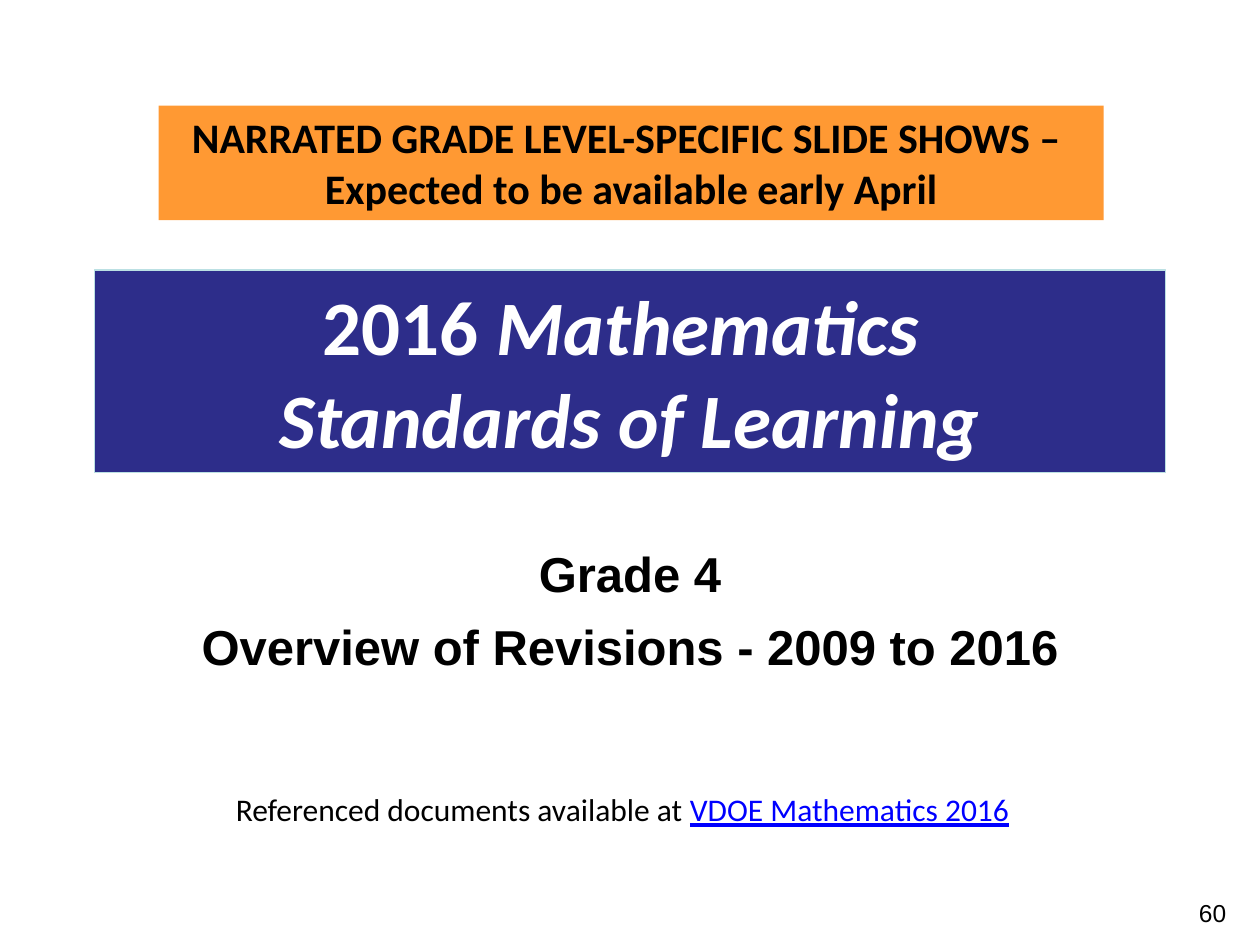
"""Build the cover slide of the Grade 4 standards overview."""
from pptx import Presentation
from pptx.dml.color import RGBColor
from pptx.enum.shapes import MSO_SHAPE as Kind
from pptx.enum.text import MSO_ANCHOR as Anchor, MSO_AUTO_SIZE as Fit, PP_ALIGN as Align
from pptx.util import Cm, Pt

NAVY = RGBColor(0x2D, 0x2D, 0x8A)
PALE = RGBColor(0xBB, 0xE0, 0xE3)
GOLD = RGBColor(0xFF, 0x99, 0x33)
BLUE = RGBColor(0x00, 0x00, 0xFF)
BLACK = RGBColor(0x00, 0x00, 0x00)
WHITE = RGBColor(0xFF, 0xFF, 0xFF)


class Deck:
    def __init__(self):
        self.prs = Presentation()
        self.prs.slide_width, self.prs.slide_height = Cm(25.4), Cm(19.05)
        self.slide = self.prs.slides.add_slide(self.prs.slide_layouts[5])
        self.base = dict(name="Calibri", size=Pt(18), bold=False, italic=False)

    def fill_text(self, shape, lines, align=Align.CENTER, gap=0, color=BLACK, **style):
        frame = shape.text_frame
        frame.word_wrap, frame.auto_size = True, Fit.NONE
        for i, line in enumerate(lines):
            para = frame.add_paragraph() if i else frame.paragraphs[0]
            para.alignment = align
            if i:
                para.space_before = Pt(gap)
            for text, extra in line:
                if text == "\n":
                    para.add_line_break()
                    continue
                run = para.add_run()
                run.text = text
                look = {**self.base, **style, **extra}
                run.font.color.rgb = look.pop("color", color)
                for key, value in look.items():
                    setattr(run.font, key, value)
        return frame

    def title(self, box, lines, **style):
        shape = self.slide.shapes.title
        shape.left, shape.top, shape.width, shape.height = map(Cm, box)
        shape.fill.solid()
        shape.fill.fore_color.rgb = NAVY
        shape.line.color.rgb = PALE
        shape.line.width = Pt(0.75)
        self.fill_text(shape, lines, **style).vertical_anchor = Anchor.MIDDLE

    def text(self, box, lines, top=0.13, **style):
        shape = self.slide.shapes.add_textbox(*map(Cm, box))
        self.fill_text(shape, lines, **style).margin_top = Cm(top)

    def band(self, box, lines, **style):
        shape = self.slide.shapes.add_shape(Kind.RECTANGLE, *map(Cm, box))
        shape.shadow.inherit = False
        shape.fill.solid()
        shape.fill.fore_color.rgb = GOLD
        shape.line.fill.background()
        self.fill_text(shape, lines, **style).vertical_anchor = Anchor.TOP


def main():
    deck = Deck()
    slant = dict(italic=True)
    deck.title((1.9, 5.44, 21.6, 4.09),
               [[("2016 ", {}), ("Mathematics ", slant), ("\n", {}),
                 ("Standards of Learning", slant)]],
               size=Pt(44), bold=True, color=WHITE)
    deck.text((3.81, 10.59, 17.78, 3.38),
              [[("Grade 4", {})], [("Overview of Revisions - 2009 to 2016", {})]],
              top=0.37, gap=8, name="Arial", size=Pt(28), bold=True)
    deck.text((19.05, 17.98, 5.92, 1.07), [[("60", {})]],
              align=Align.RIGHT, name="Arial", size=Pt(14))
    deck.text((1.85, 15.8, 21.54, 1.02),
              [[("Referenced documents available at ", {}),
                ("VDOE Mathematics 2016", dict(color=BLUE, underline=True)),
                (" ", {})]])
    deck.band((3.2, 2.13, 19.05, 2.31),
              [[("NARRATED GRADE LEVEL-SPECIFIC SLIDE SHOWS – ", {})],
               [("Expected to be available early April", {})]],
              size=Pt(24), bold=True)
    deck.prs.save("out.pptx")


if __name__ == "__main__":
    main()
